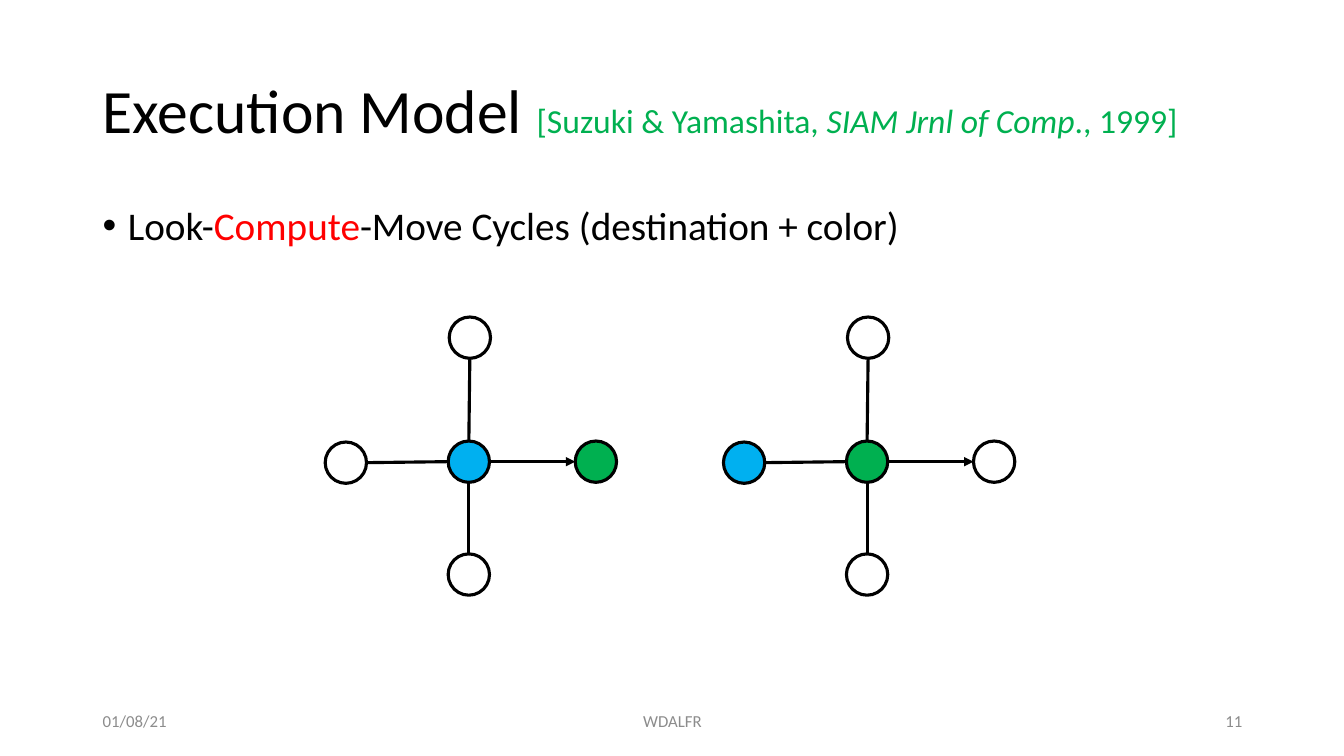
from lxml import etree
from pptx import Presentation
from pptx.dml.color import RGBColor
from pptx.enum import shapes, text
from pptx.oxml import ns
from pptx.util import Inches, Pt

BLACK, WHITE, GRAY = "000000", "FFFFFF", "8C8C8C"
BLUE, GREEN, RED = "00B0F0", "00B050", "FF0000"
LEFT, CENTER, RIGHT = text.PP_ALIGN.LEFT, text.PP_ALIGN.CENTER, text.PP_ALIGN.RIGHT
DIAMETER = 0.41
RADIUS = DIAMETER / 2
NODES = {
    "top": ((0.01, -1.23), (0, -1)),
    "left": ((-1.22, 0.01), (-1, 0)),
    "right": ((1.26, 0), (1, 0)),
    "bottom": ((0, 1.12), (0, 1)),
}


def rgb(color):
    return RGBColor.from_string(color)


def add_run(p, content, size=12, color=BLACK, italic=False):
    r = p.add_run()
    r.text = content
    r.font.name = "Calibri"
    r.font.size = Pt(size)
    r.font.italic = italic
    r.font.color.rgb = rgb(color)


def add_text(s, box, align=LEFT, anchor=text.MSO_ANCHOR.MIDDLE, spacing=1.0):
    sp = s.shapes.add_textbox(*map(Inches, box))
    tf = sp.text_frame
    tf.word_wrap = True
    tf.vertical_anchor = anchor
    p = tf.paragraphs[0]
    p.alignment = align
    p.line_spacing = spacing
    return p


def add_bullet(p):
    pPr = p._p.get_or_add_pPr()
    pPr.set("marL", str(Inches(0.25)))
    pPr.set("indent", str(Inches(-0.25)))
    etree.SubElement(pPr, ns.qn("a:buFont")).set("typeface", "Arial")
    etree.SubElement(pPr, ns.qn("a:buChar")).set("char", "•")


def set_line(line):
    line.color.rgb = rgb(BLACK)
    line.width = Pt(2.25)


def add_node(s, x, y, color):
    box = (x - RADIUS, y - RADIUS, DIAMETER, DIAMETER)
    sp = s.shapes.add_shape(shapes.MSO_SHAPE.OVAL, *map(Inches, box))
    sp.shadow.inherit = False
    sp.fill.solid()
    sp.fill.fore_color.rgb = rgb(color)
    set_line(sp.line)


def add_edge(s, x1, y1, x2, y2, arrow=False):
    ends = map(Inches, (x1, y1, x2, y2))
    cxn = s.shapes.add_connector(shapes.MSO_CONNECTOR.STRAIGHT, *ends)
    set_line(cxn.line)
    if arrow:
        ln = cxn.line._get_or_add_ln()
        etree.SubElement(ln, ns.qn("a:tailEnd")).set("type", "triangle")
    etree.SubElement(cxn._element.spPr, ns.qn("a:effectLst"))


def add_cross(s, x, y, hub, colors):
    add_node(s, x, y, hub)
    for name, ((dx, dy), (ux, uy)) in NODES.items():
        nx, ny = x + dx, y + dy
        add_node(s, nx, ny, colors.get(name, WHITE))
        add_edge(s, x + RADIUS * ux, y + RADIUS * uy,
                 nx - RADIUS * ux, ny - RADIUS * uy, arrow=name == "right")


def main():
    prs = Presentation()
    prs.slide_width, prs.slide_height = Inches(13.33), Inches(7.5)
    s = prs.slides.add_slide(prs.slide_layouts[6])

    p = add_text(s, (0.92, 0.4, 11.5, 1.45), spacing=0.9)
    add_run(p, "Execution Model ", size=44)
    add_run(p, "[Suzuki & Yamashita, ", size=24, color=GREEN)
    add_run(p, "SIAM Jrnl of Comp", size=24, color=GREEN, italic=True)
    add_run(p, "., 1999]", size=24, color=GREEN)

    p = add_text(s, (0.92, 2, 11.5, 0.6), anchor=text.MSO_ANCHOR.TOP, spacing=0.9)
    p.space_before = Pt(10)
    add_bullet(p)
    add_run(p, "Look-", size=28)
    add_run(p, "Compute", size=28, color=RED)
    add_run(p, "-Move Cycles (destination + color)", size=28)

    for left, width, align, content in (
        (0.92, 3, LEFT, "01/08/21"),
        (4.42, 4.5, CENTER, "WDALFR"),
        (9.42, 3, RIGHT, "11"),
    ):
        add_run(add_text(s, (left, 6.95, width, 0.4), align), content, color=GRAY)

    add_cross(s, 4.65, 4.58, BLUE, {"right": GREEN})
    add_cross(s, 8.6, 4.58, GREEN, {"left": BLUE})
    prs.save("out.pptx")


if __name__ == "__main__":
    main()
